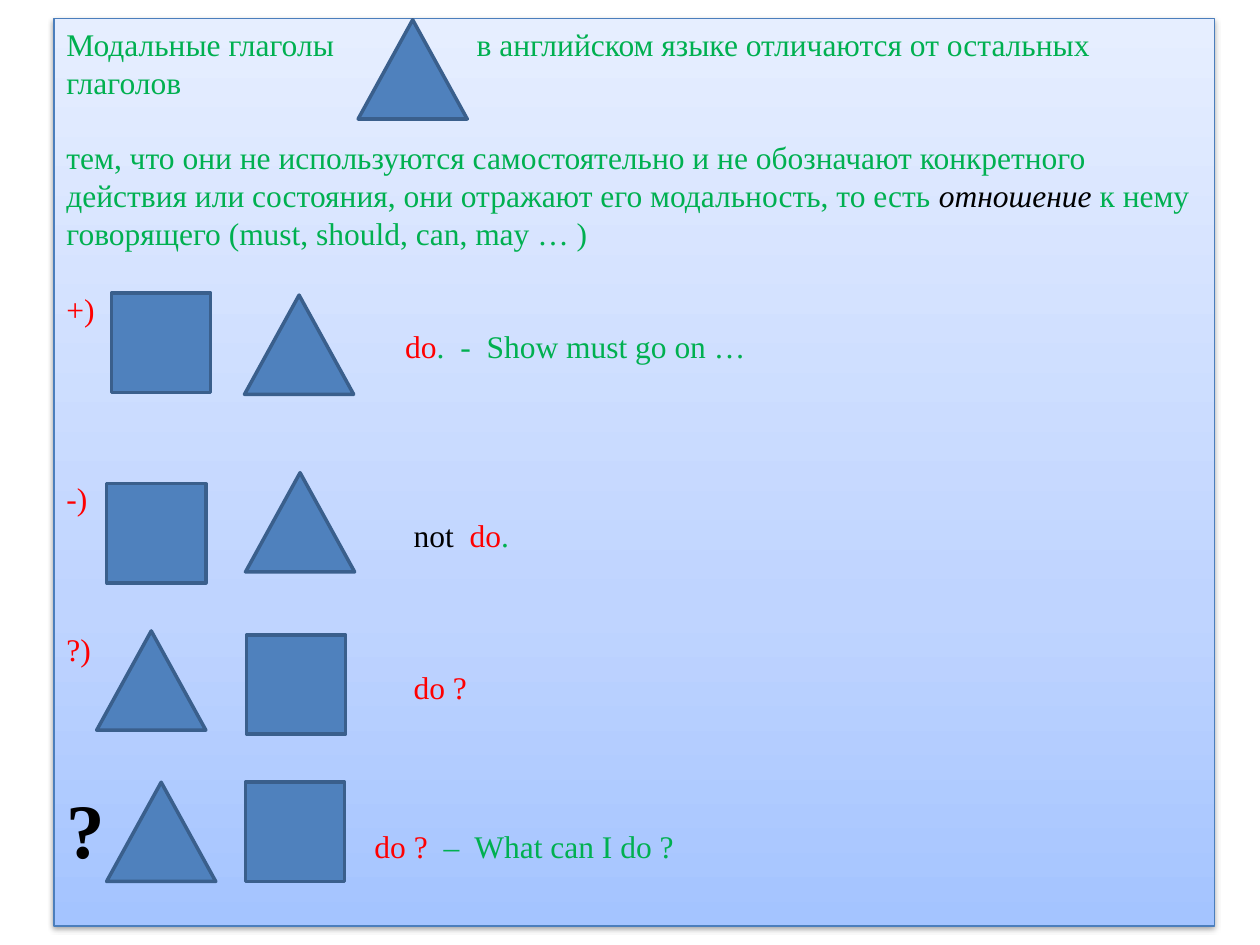
from copy import deepcopy
from lxml.etree import SubElement
from pptx import Presentation
from pptx.dml.color import RGBColor
from pptx.enum.shapes import MSO_SHAPE
from pptx.enum.text import MSO_ANCHOR, PP_ALIGN
from pptx.oxml import parse_xml
from pptx.oxml.ns import nsdecls, qn
from pptx.util import Cm, Pt

THEME = {
    "font": "Times New Roman", "body": 18, "mark": 44, "leading": 1.2,
    "green": "00B050", "red": "FF0000", "black": "000000",
    "figure": "4F81BD", "figure_edge": "3A5F8C", "panel_edge": "4B7EBC",
    "panel": [(0, "A4C4FF"), (0.35, "BFD4FF"), (1, "E6EEFF")],
}

GREEN, RED, BLACK = ({"color": name} for name in ("green", "red", "black"))
ITALIC = {"color": "black", "italic": True}
MARK = {"color": "black", "bold": True, "size": "mark"}

# fmt: off
PARAGRAPHS = [
    {"tab": 8.27, "runs": [("Модальные глаголы\tв английском языке отличаются от остальных глаголов", GREEN)]},
    {"gap": 1, "runs": [
        ("тем, что они не используются самостоятельно и не обозначают конкретного действия "
         "или состояния, они отражают его модальность, то есть ", GREEN),
        ("отношение", ITALIC),
        (" к нему говорящего (must, should, can, may … )", GREEN)]},
    {"gap": 1, "runs": [("+)", RED)]},
    {"indent": 6.83, "runs": [("do", RED), (".  -  Show must go on …", GREEN)]},
    {"gap": 3, "runs": [("-)", RED)]},
    {"indent": 7, "runs": [("not  ", BLACK), ("do", RED), (".", GREEN)]},
    {"gap": 2, "runs": [("?)", RED)]},
    {"indent": 7, "runs": [("do ?", RED)]},
    {"gap": 2, "tab": 6.21, "size": "mark", "runs": [
        ("?", MARK), ("\tdo ?  ", RED), ("–  What can I do ?", GREEN)]},
]

SUBJECT = (MSO_SHAPE.RECTANGLE, 2)
MODAL = (MSO_SHAPE.ISOSCELES_TRIANGLE, 2.2)
FIGURE_HEIGHT = 2
FIGURES = [
    (MODAL, 7.22, 0.4),
    (SUBJECT, 2.25, 5.91), (MODAL, 4.93, 5.95),
    (SUBJECT, 2.15, 9.75), (MODAL, 4.95, 9.53),
    (MODAL, 1.95, 12.72), (SUBJECT, 4.97, 12.8),
    (MODAL, 2.15, 15.77), (SUBJECT, 4.95, 15.77),
]
# fmt: on


def colour(name):
    """Return a theme entry, or a plain hex value, as a colour."""
    return RGBColor.from_string(THEME.get(name, name))


def add_text(paragraph, text, color="green", size="body", bold=False, italic=False):
    """Append a formatted run to a paragraph."""
    run = paragraph.add_run()
    run.text = text
    run.font.name = THEME["font"]
    run.font.size = Pt(THEME[size])
    run.font.bold, run.font.italic = bold, italic
    run.font.color.rgb = colour(color)


def add_paragraph(paragraph, runs, gap=0, tab=None, indent=None, size="body"):
    """Fill a paragraph; gap counts empty body lines above it."""
    paragraph.alignment = PP_ALIGN.LEFT
    paragraph.line_spacing = Pt(THEME[size] * THEME["leading"])
    paragraph.space_before = Pt(gap * THEME["body"] * THEME["leading"])
    properties = paragraph._p.get_or_add_pPr()
    if indent:
        properties.set("marL", str(Cm(indent)))
        properties.set("indent", "0")
    if tab:
        stops = SubElement(properties, qn("a:tabLst"))
        SubElement(stops, qn("a:tab"), pos=str(Cm(tab)), algn="l")
    for text, style in runs:
        add_text(paragraph, text, **style)


def add_panel(slide):
    """Add the gradient panel that carries all the text."""
    panel = slide.shapes.add_shape(MSO_SHAPE.RECTANGLE, Cm(1.09), Cm(0.38), Cm(23.39), Cm(18.29))
    panel.line.color.rgb = colour("panel_edge")
    panel.line.width = Pt(0.75)
    panel.fill.gradient()
    panel.fill.gradient_angle = 90
    stop_list = panel._element.spPr.find(qn("a:gradFill")).find(qn("a:gsLst"))
    stop_list.append(deepcopy(stop_list[0]))
    for stop, (position, shade) in zip(panel.fill.gradient_stops, THEME["panel"]):
        stop.position = position
        stop.color.rgb = colour(shade)
    panel._element.spPr.append(parse_xml(
        f'<a:effectLst {nsdecls("a")}><a:outerShdw blurRad="{Pt(3.1)}" dist="{Pt(1.6)}" '
        'dir="5400000" rotWithShape="0"><a:srgbClr val="000000"><a:alpha val="38000"/>'
        '</a:srgbClr></a:outerShdw></a:effectLst>'))
    frame = panel.text_frame
    frame.word_wrap = True
    frame.vertical_anchor = MSO_ANCHOR.TOP
    for index, content in enumerate(PARAGRAPHS):
        add_paragraph(frame.add_paragraph() if index else frame.paragraphs[0], **content)


def add_figure(slide, kind, left, top):
    """Add a square for the subject or a triangle for the modal verb."""
    outline, width = kind
    figure = slide.shapes.add_shape(outline, Cm(left), Cm(top), Cm(width), Cm(FIGURE_HEIGHT))
    figure.shadow.inherit = False
    figure.fill.solid()
    figure.fill.fore_color.rgb = colour("figure")
    figure.line.color.rgb = colour("figure_edge")
    figure.line.width = Pt(2)


def main():
    """Build the slide and save it."""
    deck = Presentation()
    deck.slide_width, deck.slide_height = Cm(25.4), Cm(19.05)
    slide = deck.slides.add_slide(deck.slide_layouts[6])
    add_panel(slide)
    for kind, left, top in FIGURES:
        add_figure(slide, kind, left, top)
    deck.save("out.pptx")


if __name__ == "__main__":
    main()
